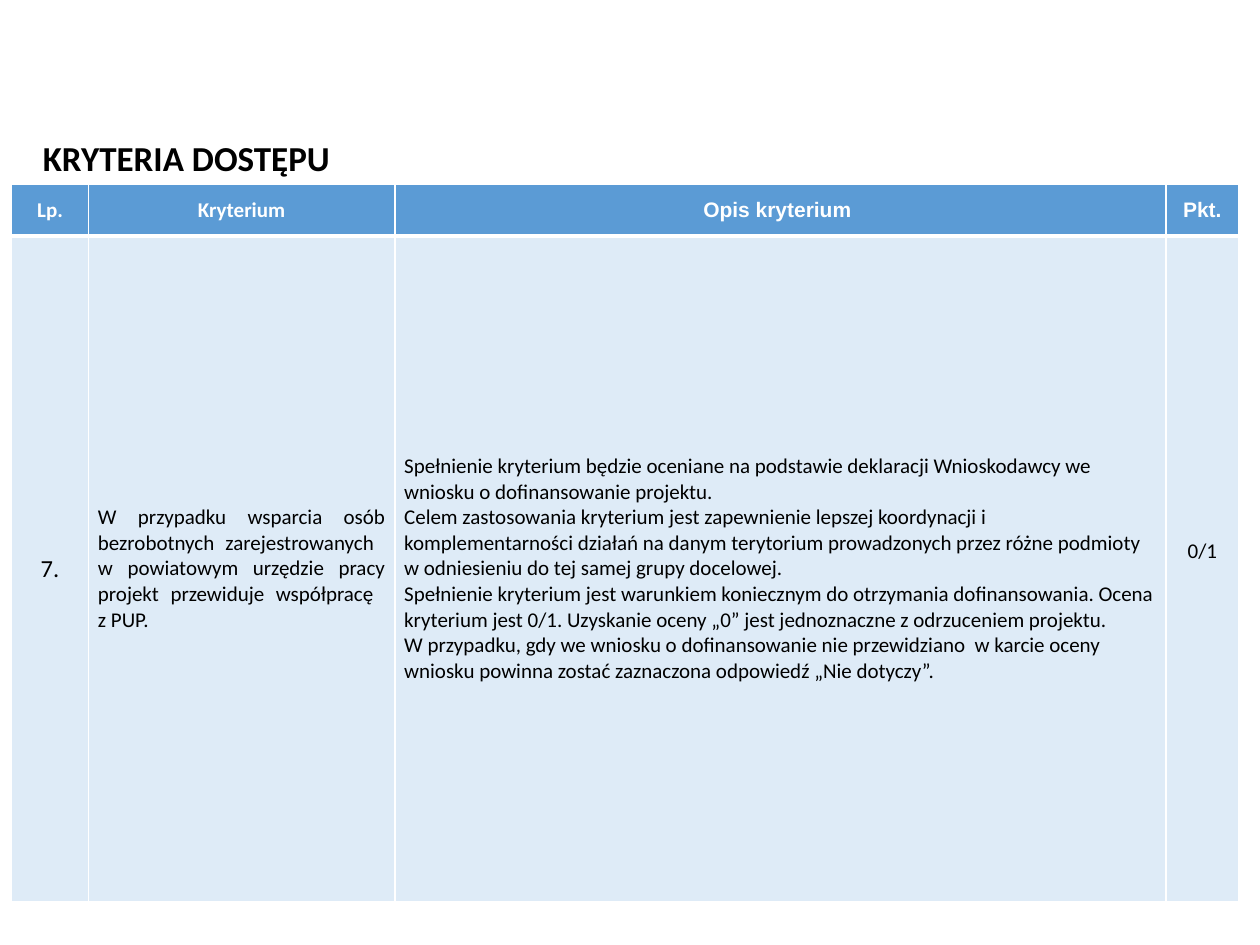
from pptx import Presentation
from pptx.dml.color import RGBColor
from pptx.enum.text import MSO_ANCHOR as Anchor, MSO_AUTO_SIZE as AutoSize, PP_ALIGN as Align
from pptx.oxml import parse_xml
from pptx.oxml.ns import nsdecls
from pptx.util import Pt

WHITE, BLACK, BLUE, PALE = "FFFFFF", "000000", "5B9BD5", "DEEBF7"
COL_WIDTHS = (44, 175, 440.6, 41.8)
ROW_HEIGHTS = (29.5, 380.2)
HEADERS = (("Lp.", "Calibri"), ("Kryterium", "Calibri"),
           ("Opis kryterium ", "Arial"), ("Pkt.", "Arial"))
CRITERION = ("W przypadku wsparcia osób bezrobotnych zarejestrowanych \v"
             "w powiatowym urzędzie pracy projekt przewiduje współpracę \vz PUP.")
DESCRIPTION = (
    "Spełnienie kryterium będzie oceniane na podstawie deklaracji Wnioskodawcy "
    "we wniosku o dofinansowanie projektu.",
    "Celem zastosowania kryterium jest zapewnienie lepszej koordynacji i "
    "komplementarności działań na danym terytorium prowadzonych przez różne "
    "podmioty w odniesieniu do tej samej grupy docelowej.",
    "Spełnienie kryterium jest warunkiem koniecznym do otrzymania dofinansowania. "
    "Ocena kryterium jest 0/1. Uzyskanie oceny „0” jest jednoznaczne z "
    "odrzuceniem projektu.",
    "W przypadku, gdy we wniosku o dofinansowanie nie przewidziano  w karcie oceny "
    "wniosku powinna zostać zaznaczona odpowiedź „Nie dotyczy”.",
)


def rgb(color):
    return RGBColor.from_string(color)


def set_font(p, size, color, bold=False, name="Calibri"):
    p.font.size, p.font.bold, p.font.name = Pt(size), bold, name
    p.font.color.rgb = rgb(color)


def set_borders(cell, top, bottom):
    """Draw white borders: 1 pt at the sides, the given widths above and below."""
    tc_pr = cell._tc.get_or_add_tcPr()
    for side, width in (("L", 1), ("R", 1), ("T", top), ("B", bottom)):
        tc_pr.append(parse_xml(
            f'<a:ln{side} {nsdecls("a")} w="{Pt(width)}"><a:solidFill>'
            f'<a:srgbClr val="{WHITE}"/></a:solidFill></a:ln{side}>'))


def set_margins(cell, bottom=0):
    cell.margin_left = cell.margin_right = Pt(5.4)
    cell.margin_top, cell.margin_bottom = Pt(0), Pt(bottom)


def fill_cell(cell, paragraphs, fill, align, **font):
    cell.fill.solid()
    cell.fill.fore_color.rgb = rgb(fill)
    cell.vertical_anchor = Anchor.MIDDLE
    tf = cell.text_frame
    for i, text in enumerate(paragraphs):
        p = tf.add_paragraph() if i else tf.paragraphs[0]
        p.text = text
        p.alignment = align
        set_font(p, **font)


def add_title(slide, text):
    sp = slide.shapes.title
    sp.left, sp.top, sp.width, sp.height = Pt(17.3), Pt(74.2), Pt(571.7), Pt(31.5)
    tf = sp.text_frame
    tf.word_wrap = True
    tf.auto_size = AutoSize.SHAPE_TO_FIT_TEXT
    tf.vertical_anchor = Anchor.MIDDLE
    p = tf.paragraphs[0]
    p.text = text
    p.alignment = Align.LEFT
    set_font(p, 20, BLACK, bold=True)


def add_criteria_table(slide):
    table = slide.shapes.add_table(2, 4, Pt(6.6), Pt(105.4), Pt(sum(COL_WIDTHS)),
                                   Pt(sum(ROW_HEIGHTS))).table
    for column, width in zip(table.columns, COL_WIDTHS):
        column.width = Pt(width)
    for row, height in zip(table.rows, ROW_HEIGHTS):
        row.height = Pt(height)

    for col, (text, name) in enumerate(HEADERS):
        cell = table.cell(0, col)
        set_borders(cell, top=1, bottom=3)
        fill_cell(cell, [text], BLUE, Align.CENTER,
                  size=12, color=WHITE, bold=True, name=name)

    body = ((["7."], Align.CENTER, 14), ([CRITERION], Align.JUSTIFY, 12),
            (DESCRIPTION, Align.LEFT, 12), (["0/1"], Align.CENTER, 12))
    for col, (paragraphs, align, size) in enumerate(body):
        cell = table.cell(1, col)
        set_borders(cell, top=3, bottom=1)
        fill_cell(cell, paragraphs, PALE, align, size=size, color=BLACK)
        if col:
            set_margins(cell)
    set_margins(table.cell(1, 3), bottom=20)


def main():
    prs = Presentation()
    prs.slide_width, prs.slide_height = Pt(720), Pt(540)
    slide = prs.slides.add_slide(prs.slide_layouts[5])
    add_criteria_table(slide)
    add_title(slide, "KRYTERIA DOSTĘPU")
    prs.save("out.pptx")


if __name__ == "__main__":
    main()
